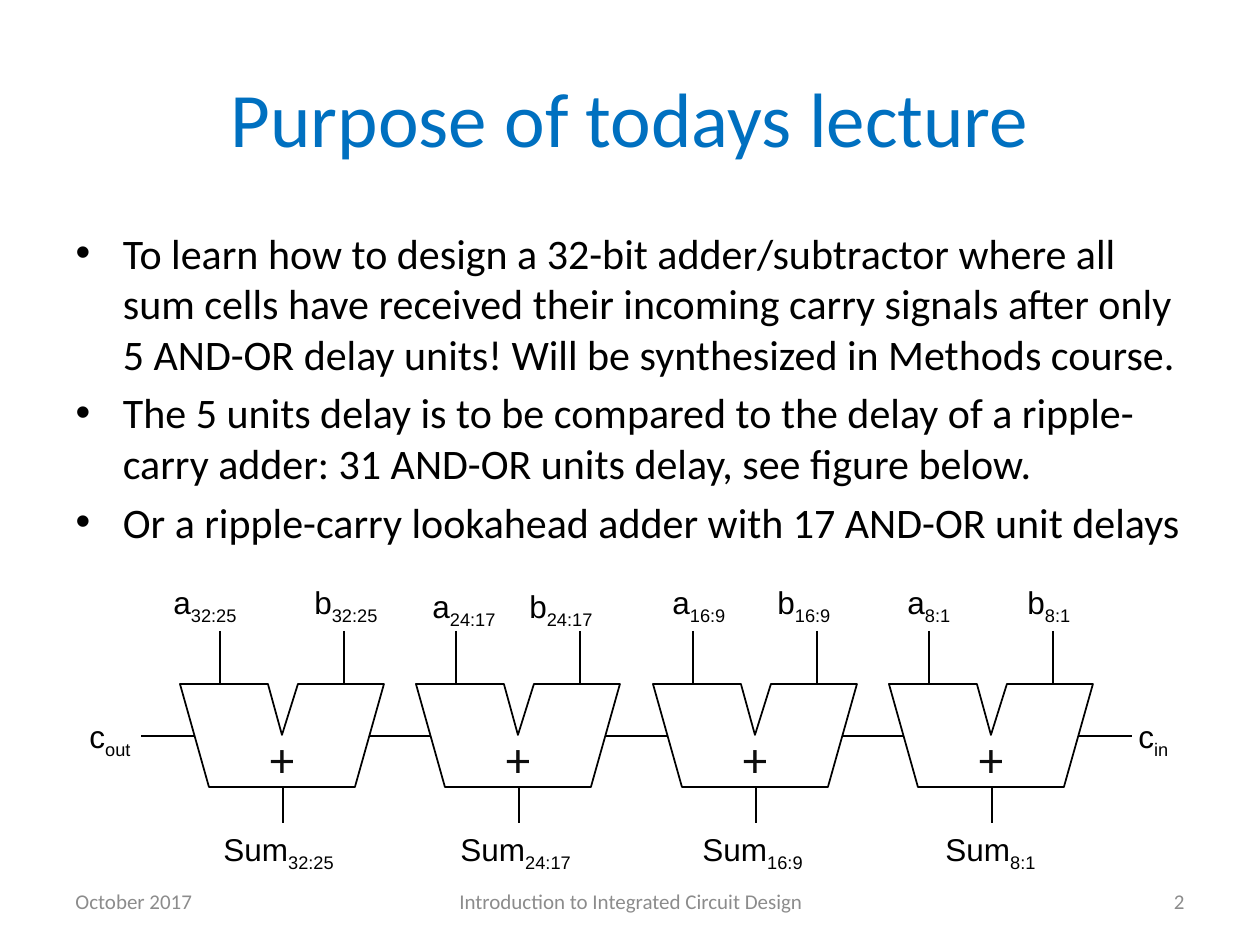
import dataclasses
import typing

import pptx
import pptx.dml.color
import pptx.enum.shapes
import pptx.enum.text
import pptx.oxml.ns
import pptx.util
from lxml import etree

EMU_PER_PX = 914400 / 126
ALIGN = pptx.enum.text.PP_ALIGN
ANCHOR = pptx.enum.text.MSO_ANCHOR
AUTO_SIZE = pptx.enum.text.MSO_AUTO_SIZE


@dataclasses.dataclass(frozen=True)
class Theme:
    heading: str = "0070C0"
    ink: str = "000000"
    plus: str = "0D0D0D"
    footer: str = "8C8C8C"
    paper: str = "FFFFFF"
    text_font: str = "Calibri"
    label_font: str = "Arial"
    heading_size: int = 44
    body_size: int = 24
    plus_size: int = 28
    label_size: int = 18
    footer_size: int = 12
    line_width: int = 1


@dataclasses.dataclass(frozen=True)
class Box:
    left: int
    top: int
    width: int
    height: int


@dataclasses.dataclass(frozen=True)
class Signal:
    stem: str
    index: str
    box: Box


@dataclasses.dataclass(frozen=True)
class Footer:
    wording: str
    box: Box
    alignment: ALIGN


@dataclasses.dataclass(frozen=True)
class Wire:
    x1: int
    y1: int
    x2: int
    y2: int


THEME = Theme()

PURPOSES = (
    "To learn how to design a 32-bit adder/subtractor where all sum cells have received "
    "their incoming carry signals after only 5 AND-OR delay units! "
    "Will be synthesized in Methods course.",
    "The 5 units delay is to be compared to the delay of a ripple-carry adder: "
    "31 AND-OR units delay, see figure below.",
    "Or a ripple-carry lookahead adder with 17 AND-OR unit delays",
)

FOOTERS = (
    Footer("October 2017", Box(63, 876, 294, 50), ALIGN.LEFT),
    Footer("Introduction to Integrated Circuit Design", Box(431, 876, 400, 50), ALIGN.CENTER),
    Footer("2", Box(903, 876, 294, 50), ALIGN.RIGHT),
)

ADDER_TOP = 684
ADDER_LEFTS = tuple(180 + 473 * place // 2 for place in range(4))
ADDER_OUTLINE = ((204, 0), (118, 0), (102, 51), (88, 0), (0, 0), (29, 103), (175, 103))
ADDER_WIRES = (
    Wire(243, 52, -39, 52),
    Wire(103, 67, 103, 139),
    Wire(40, -53, 40, 20),
    Wire(164, -53, 164, 20),
)

BIT_GROUPS = (
    ("32:25", 577, 161, 302, 89, 211, 144),
    ("24:17", 581, 420, 517, 89, 448, 144),
    ("16:9", 577, 660, 765, 79, 690, 132),
    ("8:1", 577, 895, 1015, 69, 933, 120),
)
CARRIES = (
    Signal("c", "in", Box(1126, 711, 58, 50)),
    Signal("c", "out", Box(77, 711, 71, 50)),
)


def emu(px: int) -> int:
    return round(px * EMU_PER_PX)


def assign(target: typing.Any, values: dict) -> None:
    for name, value in values.items():
        setattr(target, name, value)


def place(box: Box) -> dict:
    return {name: emu(px) for name, px in dataclasses.asdict(box).items()}


def rgb(colour: str) -> pptx.dml.color.RGBColor:
    return pptx.dml.color.RGBColor.from_string(colour)


def write(paragraph, wording: str, size: int, font: str, colour: str):
    run = paragraph.add_run()
    run.text = wording
    assign(run.font, {"size": pptx.util.Pt(size), "name": font})
    run.font.color.rgb = rgb(colour)
    return run


def ink(line) -> None:
    line.color.rgb = rgb(THEME.ink)
    line.width = pptx.util.Pt(THEME.line_width)


def draw_wire(shapes, wire: Wire, left: int) -> None:
    connector = shapes.add_connector(
        pptx.enum.shapes.MSO_CONNECTOR.STRAIGHT,
        emu(left + wire.x1), emu(ADDER_TOP + wire.y1),
        emu(left + wire.x2), emu(ADDER_TOP + wire.y2),
    )
    ink(connector.line)
    etree.SubElement(connector._element.spPr, pptx.oxml.ns.qn("a:effectLst"))


def draw_adder(slide, left: int) -> None:
    group = slide.shapes.add_group_shape()
    for wire in ADDER_WIRES:
        draw_wire(group.shapes, wire, left)
    corners = [(left + x, ADDER_TOP + y) for x, y in ADDER_OUTLINE]
    outline = group.shapes.build_freeform(*corners[0], scale=EMU_PER_PX)
    outline.add_line_segments(corners[1:], close=True)
    adder = outline.convert_to_shape()
    adder.shadow.inherit = False
    adder.fill.solid()
    adder.fill.fore_color.rgb = rgb(THEME.paper)
    ink(adder.line)
    assign(adder.text_frame, {
        "vertical_anchor": ANCHOR.BOTTOM, "word_wrap": True, "margin_bottom": 0,
    })
    sign = adder.text_frame.paragraphs[0]
    assign(sign, {
        "alignment": ALIGN.CENTER, "line_spacing": 1.07, "space_before": pptx.util.Pt(18),
    })
    write(sign, "+", THEME.plus_size, THEME.text_font, THEME.plus)


def draw_signal(slide, signal: Signal) -> None:
    label = slide.shapes.add_textbox(**place(signal.box)).text_frame
    assign(label, {"word_wrap": False, "auto_size": AUTO_SIZE.SHAPE_TO_FIT_TEXT})
    style = (THEME.label_size, THEME.label_font, THEME.ink)
    write(label.paragraphs[0], signal.stem, *style)
    index = write(label.paragraphs[0], signal.index, *style)
    index.font._element.set("baseline", "-25000")


def draw_footer(slide, footer: Footer) -> None:
    frame = slide.shapes.add_textbox(**place(footer.box)).text_frame
    assign(frame, {"word_wrap": True, "vertical_anchor": ANCHOR.MIDDLE})
    frame.paragraphs[0].alignment = footer.alignment
    write(frame.paragraphs[0], footer.wording, THEME.footer_size, THEME.text_font, THEME.footer)


def main() -> None:
    deck = pptx.Presentation()
    assign(deck, {"slide_width": emu(1260), "slide_height": emu(945)})
    slide = deck.slides.add_slide(deck.slide_layouts[1])

    heading = slide.shapes.title
    assign(heading, place(Box(63, 38, 1134, 158)))
    heading.text_frame.vertical_anchor = ANCHOR.MIDDLE
    heading.text_frame.paragraphs[0].alignment = ALIGN.CENTER
    write(heading.text_frame.paragraphs[0], "Purpose of todays lecture",
          THEME.heading_size, THEME.text_font, THEME.heading)

    purposes = slide.placeholders[1]
    assign(purposes, place(Box(63, 221, 1134, 346)))
    purposes.text_frame.auto_size = AUTO_SIZE.NONE
    for order, purpose in enumerate(PURPOSES):
        frame = purposes.text_frame
        paragraph = frame.add_paragraph() if order else frame.paragraphs[0]
        write(paragraph, purpose, THEME.body_size, THEME.text_font, THEME.ink)

    for footer in FOOTERS:
        draw_footer(slide, footer)
    for left in reversed(ADDER_LEFTS):
        draw_adder(slide, left)
    for bits, top, a_left, b_left, width, sum_left, sum_width in BIT_GROUPS:
        draw_signal(slide, Signal("a", bits, Box(a_left, top, width, 50)))
        draw_signal(slide, Signal("b", bits, Box(b_left, top, width, 50)))
        draw_signal(slide, Signal("Sum", bits, Box(sum_left, 824, sum_width, 50)))
    for carry in CARRIES:
        draw_signal(slide, carry)
    deck.save("out.pptx")


if __name__ == "__main__":
    main()
